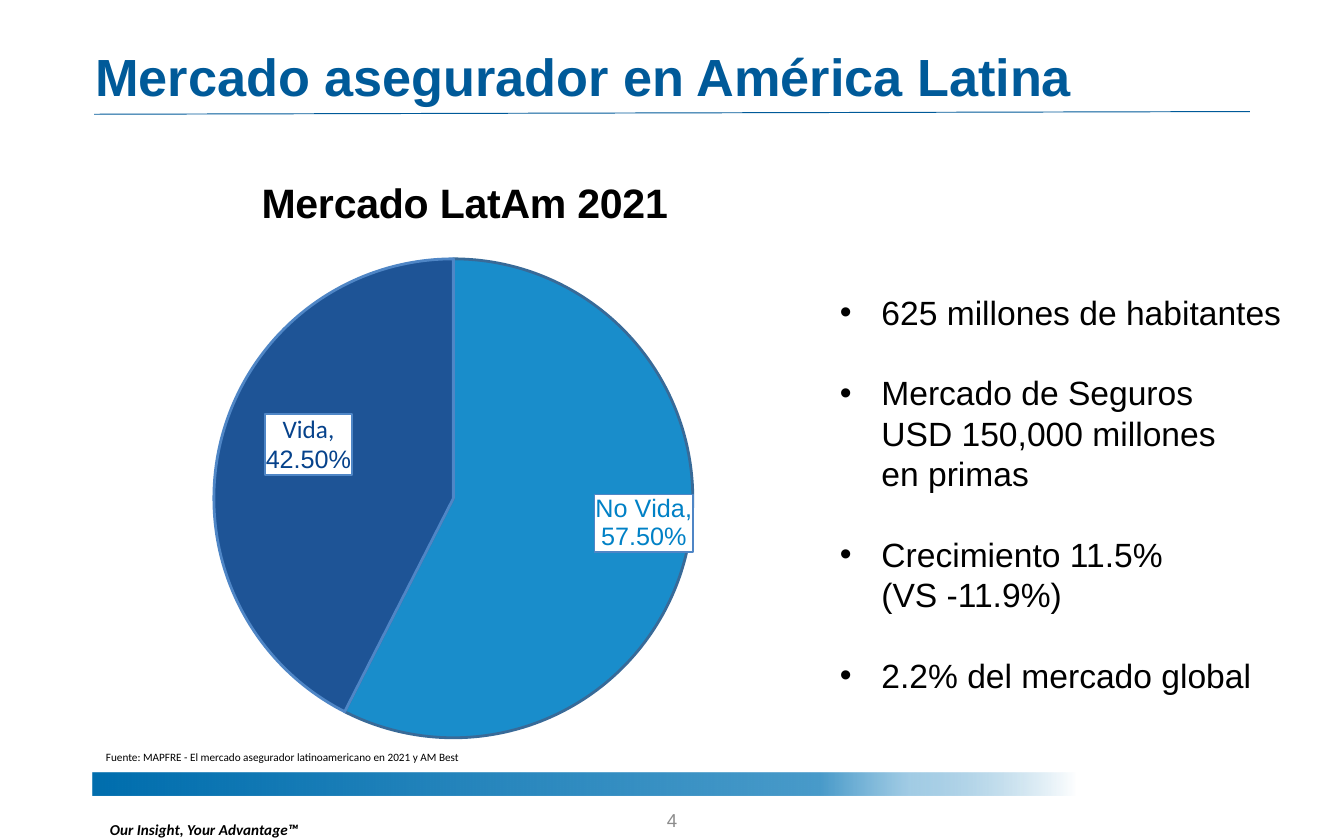
from lxml import etree
from pptx import Presentation
from pptx.chart.data import CategoryChartData
from pptx.dml.color import RGBColor
from pptx.enum.chart import XL_CHART_TYPE, XL_LABEL_POSITION
from pptx.enum.shapes import MSO_CONNECTOR, MSO_SHAPE
from pptx.enum.text import MSO_ANCHOR, PP_ALIGN
from pptx.oxml import parse_xml
from pptx.oxml.ns import nsdecls, qn
from pptx.util import Inches, Pt

PIE = XL_CHART_TYPE.PIE
INSIDE_END = XL_LABEL_POSITION.INSIDE_END
STRAIGHT = MSO_CONNECTOR.STRAIGHT
RECTANGLE = MSO_SHAPE.RECTANGLE
MIDDLE, BOTTOM = MSO_ANCHOR.MIDDLE, MSO_ANCHOR.BOTTOM
LEFT, CENTER = PP_ALIGN.LEFT, PP_ALIGN.CENTER

BLACK = RGBColor(0x00, 0x00, 0x00)
GRAY = RGBColor(0x8C, 0x8C, 0x8C)
TITLE_BLUE = RGBColor(0x00, 0x5A, 0x99)
LIGHT_BLUE = RGBColor(0x00, 0x81, 0xC6)
DARK_BLUE = RGBColor(0x06, 0x42, 0x8B)
EDGE_BLUE = RGBColor(0x4F, 0x86, 0xC6)
EDGE_DARK = RGBColor(0x38, 0x6A, 0x98)

# Position %, colour, opacity %
BAND_STOPS = [(0, "006EAE", 100), (74, "499BCA", 100), (83, "88BEDE", 78), (100, "348EC1", 0)]

# Name, share, share text, name font, colour, edge, label offset (fractions of the chart)
SEGMENTS = [
    ("No Vida", 0.575, "57.50%", "Arial", LIGHT_BLUE, EDGE_DARK, (0.02, 0)),
    ("Vida", 0.425, "42.50%", "Calibri", DARK_BLUE, EDGE_BLUE, (0.05, -0.05)),
]

FACTS = [
    "625 millones de habitantes",
    "Mercado de Seguros\vUSD 150,000 millones\ven primas",
    "Crecimiento 11.5%\v(VS -11.9%)",
    "2.2% del mercado global",
]


def set_font(font, size, color, name="Arial", bold=False):
    font.name, font.size, font.bold = name, Pt(size), bold
    font.color.rgb = color


def add_text(slide, box, text, size, color=BLACK, name="Arial", align=LEFT):
    frame = slide.shapes.add_textbox(*box).text_frame
    frame.word_wrap = True
    frame.text = text
    paragraph = frame.paragraphs[0]
    paragraph.alignment = align
    set_font(paragraph.runs[0].font, size, color, name)
    return frame


def add_header(slide, box):
    left, top, width, height = box
    title = slide.shapes.title
    title.left, title.top, title.width, title.height = box
    frame = title.text_frame
    frame.text = "Mercado asegurador en América Latina"
    frame.vertical_anchor = BOTTOM
    paragraph = frame.paragraphs[0]
    paragraph.alignment = LEFT
    paragraph.line_spacing = 0.9
    set_font(paragraph.runs[0].font, 28, TITLE_BLUE, bold=True)

    rule = slide.shapes.add_connector(
        STRAIGHT, left + Inches(0.09), top + height,
        left + width + Inches(0.1), top + height - Inches(0.02))
    rule.line.color.rgb = TITLE_BLUE
    rule.line.width = Pt(0.5)
    etree.SubElement(rule._element.spPr, qn("a:effectLst"))


def manual_layout(settings):
    """Return a c:layout element with the given (tag, value) pairs."""
    children = "".join(f'<c:{tag} val="{value}"/>' for tag, value in settings)
    return parse_xml(f'<c:layout {nsdecls("c")}><c:manualLayout>{children}'
                     '</c:manualLayout></c:layout>')


def add_segment_label(point, segment):
    name, _, share_text, name_font, color, _, (dx, dy) = segment
    label = point.data_label
    frame = label.text_frame
    frame.text = name + ","
    frame.add_paragraph().text = share_text
    for paragraph, font_name in zip(frame.paragraphs, (name_font, "Arial")):
        set_font(paragraph.runs[0].font, 13.5, color, font_name)
    label.position = INSIDE_END

    text = frame._txBody.getparent()
    text.addprevious(manual_layout([("x", dx), ("y", dy)]))
    text.addnext(parse_xml(
        f'<c:spPr {nsdecls("c", "a")}><a:solidFill><a:srgbClr val="FFFFFF"/></a:solidFill>'
        f'<a:ln w="12700"><a:solidFill><a:srgbClr val="{EDGE_BLUE}"/></a:solidFill></a:ln></c:spPr>'))
    text.getparent().find(qn("c:showCatName")).set("val", "1")


def add_market_chart(slide, box):
    data = CategoryChartData(number_format="0.00%")
    data.categories = [segment[0] for segment in SEGMENTS]
    data.add_series("Series 1", [segment[1] for segment in SEGMENTS])
    chart = slide.shapes.add_chart(PIE, *box, data).chart
    set_font(chart.font, 10, BLACK, "Calibri")
    chart.has_legend = False
    chart.has_title = True
    heading = chart.chart_title.text_frame
    heading.text = "Mercado LatAm 2021"
    set_font(heading.paragraphs[0].runs[0].font, 22, BLACK, bold=True)
    heading_element = chart.chart_title._element
    for layout in heading_element.findall(qn("c:layout")):
        heading_element.remove(layout)
    heading._txBody.getparent().addnext(manual_layout(
        [("xMode", "edge"), ("yMode", "edge"), ("x", 0.22), ("y", 0.03)]))

    plot = chart.plots[0]
    plot.vary_by_categories = True
    series = plot.series[0]
    labels = series.data_labels
    labels.show_value = labels.show_category_name = True
    labels.number_format, labels.number_format_is_linked = "0.00%", False
    labels.position = INSIDE_END
    for index, segment in enumerate(SEGMENTS):
        point = series.points[index]
        fill, line = point.format.fill, point.format.line
        fill.solid()
        fill.fore_color.rgb = segment[4]
        fill_color = series._element.findall(qn("c:dPt"))[index].find(".//" + qn("a:srgbClr"))
        etree.SubElement(fill_color, qn("a:alpha")).set("val", "90000")
        line.color.rgb = segment[5]
        line.width = Pt(1.5)
        add_segment_label(point, segment)

    plot_area = chart._chartSpace.chart.plotArea
    for layout in plot_area.findall(qn("c:layout")):
        plot_area.remove(layout)
    plot_area.insert(0, manual_layout(
        [("layoutTarget", "inner"), ("xMode", "edge"), ("yMode", "edge"),
         ("x", 0.165), ("y", 0.177), ("w", 0.653), ("h", 0.792)]))


def add_facts(slide, box):
    frame = slide.shapes.add_textbox(*box).text_frame
    frame.word_wrap = True
    for index, fact in enumerate(FACTS):
        paragraph = frame.add_paragraph() if index else frame.paragraphs[0]
        paragraph.text = fact
        if index:
            paragraph.space_before = Pt(21.7)
        properties = paragraph._p.get_or_add_pPr()
        properties.set("marL", str(Inches(0.31)))
        properties.set("indent", str(-Inches(0.31)))
        etree.SubElement(properties, qn("a:buFont")).set("typeface", "Arial")
        etree.SubElement(properties, qn("a:buChar")).set("char", "•")
        set_font(paragraph.font, 18, BLACK)
        for run in paragraph.runs:
            set_font(run.font, 18, BLACK)


def add_footer(slide, box):
    left, top, _, _ = box
    band = slide.shapes.add_shape(RECTANGLE, *box)
    band.shadow.inherit = False
    band.line.fill.background()
    band.fill.gradient()
    band.fill.gradient_angle = 0
    stops = band._element.spPr.find(qn("a:gradFill")).find(qn("a:gsLst"))
    for stop in list(stops):
        stops.remove(stop)
    for position, color, opacity in BAND_STOPS:
        stops.append(parse_xml(
            f'<a:gs {nsdecls("a")} pos="{position * 1000}"><a:srgbClr val="{color}">'
            f'<a:alpha val="{opacity * 1000}"/></a:srgbClr></a:gs>'))

    add_text(slide, (left, top - Inches(0.22), Inches(3.23), Inches(0.2)),
             "Fuente: MAPFRE - El mercado asegurador latinoamericano en 2021 y AM Best",
             6, name="Calibri")
    tagline = add_text(slide, (left + Inches(0.03), top + Inches(0.28), Inches(3), Inches(0.26)),
                       "Our Insight, Your Advantage™", 14, name="Calibri")
    font = tagline.paragraphs[0].runs[0].font
    font.bold = font.italic = True
    font._element.set("baseline", "30000")
    number = add_text(slide, (Inches(4.28), top + Inches(0.21), Inches(1.44), Inches(0.29)),
                      "4", 10, GRAY, align=CENTER)
    number.vertical_anchor = MIDDLE


def main():
    deck = Presentation()
    deck.slide_width, deck.slide_height = Inches(10), Inches(6.25)
    slide = deck.slides.add_slide(deck.slide_layouts[5])
    add_header(slide, (Inches(0.61), Inches(0.2), Inches(8.59), Inches(0.65)))
    add_market_chart(slide, (Inches(0.69), Inches(1.13), Inches(5.46), Inches(4.5)))
    add_facts(slide, (Inches(6.15), Inches(2.12), Inches(3.49), Inches(3.43)))
    add_footer(slide, (Inches(0.69), Inches(5.75), Inches(7.31), Inches(0.17)))
    deck.save("out.pptx")


if __name__ == "__main__":
    main()
